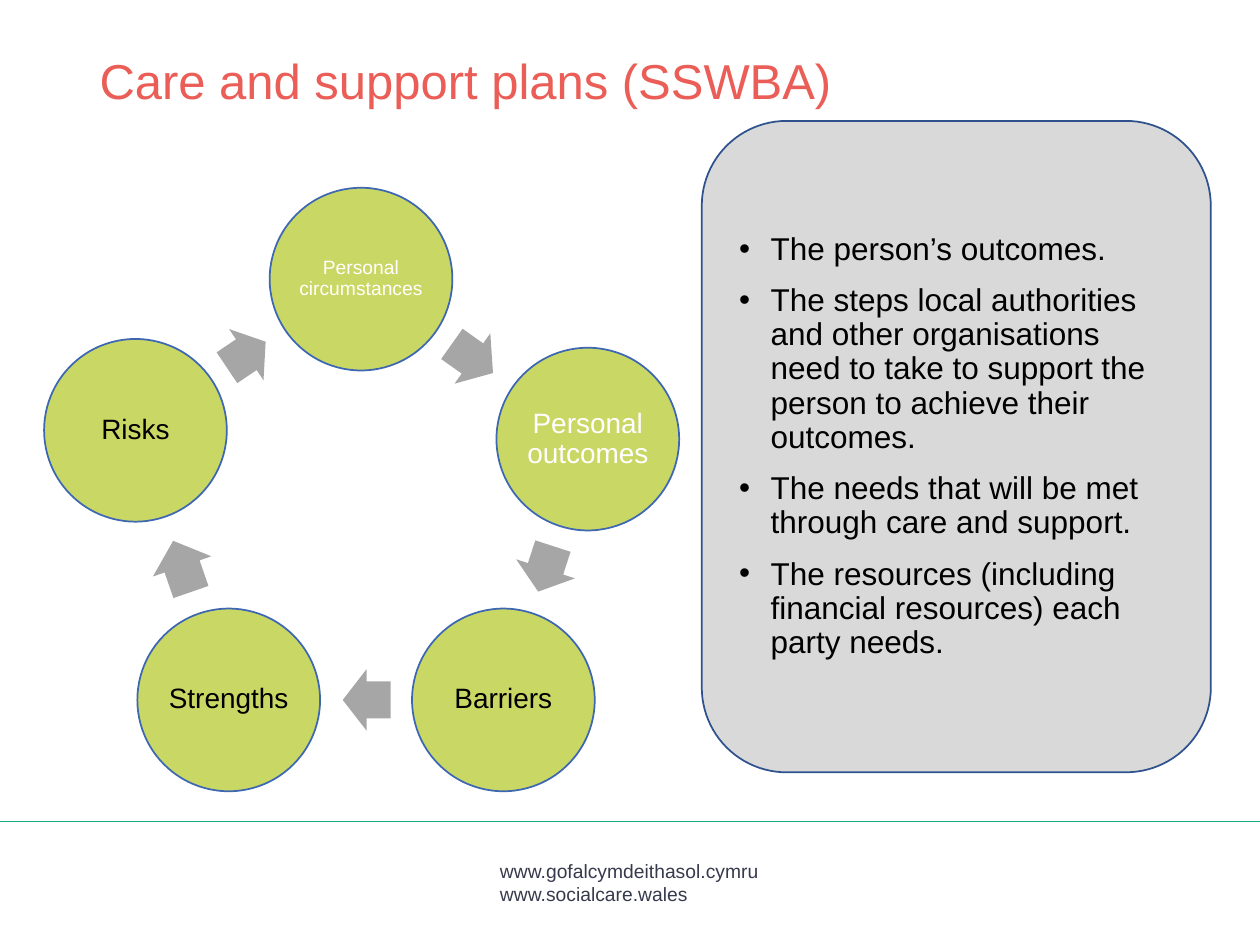
from lxml import etree
from pptx import Presentation
from pptx import util as u
from pptx.dml.color import RGBColor
from pptx.enum import shapes, text
from pptx.oxml.ns import qn

COLORS = {
    "title": "EB5E57", "panel": "D9D9D9", "panel_line": "2F528F",
    "circle": "C9D765", "circle_line": "3E67B2", "arrow": "A6A6A6",
    "rule": "16AD85", "footer": "37394C", "black": "000000", "white": "FFFFFF",
}
DIAMETER = 1.45
ARROW_HEIGHT = 0.49

STEPS = [
    ("Personal circumstances", 2.14, 1.49, 11, "white"),
    ("Personal outcomes", 3.94, 2.76, 16, "white"),
    ("Barriers", 3.27, 4.83, 16, "black"),
    ("Strengths", 1.09, 4.83, 16, "black"),
    ("Risks", 0.35, 2.69, 16, "black"),
]
ARROWS = [
    (3.55, 2.6, 0.4, 35.4),
    (4.14, 4.27, 0.38, 108),
    (2.72, 5.31, 0.38, 180),
    (1.23, 4.25, 0.43, 250.9),
    (1.77, 2.57, 0.37, 326.1),
]
PLAN_CONTENTS = [
    "The person’s outcomes.",
    "The steps local authorities and other organisations need to take to support "
    "the person to achieve their outcomes.",
    "The needs that will be met through care and support.",
    "The resources (including financial resources) each party needs.",
]


class SlideBuilder:
    font = "Arial"

    def __init__(self, s):
        self.s = s

    def color(self, name):
        return RGBColor.from_string(COLORS[name])

    def place(self, sp, *box):
        sp.left, sp.top, sp.width, sp.height = map(u.Inches, box)

    def outline(self, sp, name):
        sp.line.color.rgb = self.color(name)
        sp.line.width = u.Pt(1)

    def set_text(self, tf, lines, size, color, align=text.PP_ALIGN.LEFT,
                 anchor=text.MSO_ANCHOR.TOP, spacing=0.9, before=0):
        tf.text = "\n".join(lines)
        tf.word_wrap = True
        tf.auto_size = text.MSO_AUTO_SIZE.NONE
        tf.vertical_anchor = anchor
        for i, p in enumerate(tf.paragraphs):
            p.alignment = align
            p.line_spacing = spacing
            p.space_before = u.Pt(before if i else 0)
            for r in p.runs:
                r.font.name = self.font
                r.font.size = u.Pt(size)
                r.font.color.rgb = self.color(color)

    def title(self, line, *box):
        sp = self.s.shapes.title
        self.place(sp, *box)
        self.set_text(sp.text_frame, [line], 28, "title")

    def bullet_panel(self, lines, *box):
        sp = self.s.placeholders[1]
        self.place(sp, *box)
        geom = etree.Element(qn("a:prstGeom"), prst="roundRect")
        etree.SubElement(geom, qn("a:avLst"))
        sp._element.spPr.find(qn("a:xfrm")).addnext(geom)
        sp.fill.solid()
        sp.fill.fore_color.rgb = self.color("panel")
        self.outline(sp, "panel_line")
        self.set_text(sp.text_frame, lines, 18, "black",
                      anchor=text.MSO_ANCHOR.MIDDLE, before=10)
        for p in sp.text_frame.paragraphs:
            pPr = p._p.get_or_add_pPr()
            pPr.set("marL", str(u.Inches(0.25)))
            pPr.set("indent", str(-u.Inches(0.25)))
            etree.SubElement(pPr, qn("a:buFont"), typeface=self.font)
            etree.SubElement(pPr, qn("a:buChar"), char="•")

    def shape(self, kind, fill, *box):
        sp = self.s.shapes.add_shape(kind, *map(u.Inches, box))
        sp.shadow.inherit = False
        sp.fill.solid()
        sp.fill.fore_color.rgb = self.color(fill)
        return sp

    def circle(self, label, x, y, size, color):
        sp = self.shape(shapes.MSO_SHAPE.OVAL, "circle", x, y, DIAMETER, DIAMETER)
        self.outline(sp, "circle_line")
        tf = sp.text_frame
        tf.margin_left = tf.margin_right = u.Inches(0.02)
        tf.margin_top = tf.margin_bottom = u.Inches(0.02)
        self.set_text(tf, [label], size, color, text.PP_ALIGN.CENTER,
                      text.MSO_ANCHOR.MIDDLE)

    def arrow(self, x, y, width, rotation):
        sp = self.shape(shapes.MSO_SHAPE.RIGHT_ARROW, "arrow",
                        x, y, width, ARROW_HEIGHT)
        sp.line.fill.background()
        sp.adjustments[0] = 0.6
        sp.adjustments[1] = 0.5
        sp.rotation = rotation

    def rule(self, y, width):
        line = self.s.shapes.add_connector(
            shapes.MSO_CONNECTOR.STRAIGHT, 0, u.Inches(y), u.Inches(width), u.Inches(y))
        self.outline(line, "rule")
        etree.SubElement(line._element.spPr, qn("a:effectLst"))

    def footer(self, lines, *box):
        sp = self.s.shapes.add_textbox(*map(u.Inches, box))
        self.set_text(sp.text_frame, lines, 11, "footer", spacing=1)


def main():
    prs = Presentation()
    prs.slide_width, prs.slide_height = u.Inches(10), u.Inches(7.5)
    b = SlideBuilder(prs.slides.add_slide(prs.slide_layouts[1]))
    b.title("Care and support plans (SSWBA)", 0.69, 0.4, 7.86, 1.13)
    b.bullet_panel(PLAN_CONTENTS, 5.57, 0.96, 4.04, 5.17)
    for step, arrow in zip(STEPS, ARROWS):
        b.circle(*step)
        b.arrow(*arrow)
    b.rule(6.52, 10)
    b.footer(["www.gofalcymdeithasol.cymru", "www.socialcare.wales"],
             3.87, 6.77, 2.26, 0.46)
    prs.save("out.pptx")


if __name__ == "__main__":
    main()
